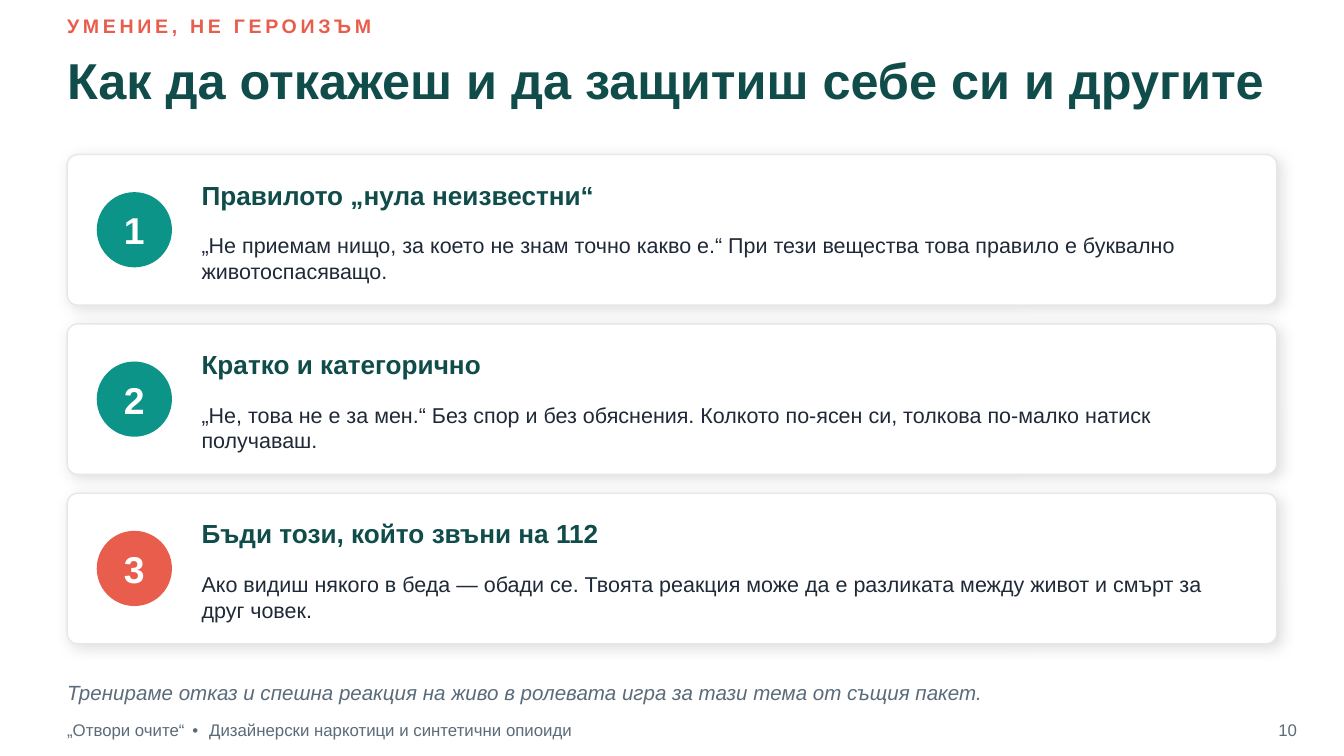
from dataclasses import dataclass

from lxml.etree import SubElement
from pptx import Presentation
from pptx.dml.color import RGBColor as Rgb
from pptx.enum.shapes import MSO_SHAPE as Preset
from pptx.enum.text import MSO_ANCHOR as Anchor, PP_ALIGN as Align
from pptx.oxml.ns import qn
from pptx.shapes.autoshape import Shape
from pptx.slide import Slide
from pptx.util import Pt


@dataclass(frozen=True)
class Theme:
    font: str = "Arial"
    white: str = "FFFFFF"
    dark: str = "0F4C4A"
    teal: str = "0D9488"
    coral: str = "E85D4C"
    body: str = "1F2937"
    muted: str = "5B6B7A"
    border: str = "E5E7EB"
    shadow: str = "000000"
    kicker_size: float = 10.5
    title_size: float = 27
    number_size: float = 20
    heading_size: float = 14
    body_size: float = 11.5
    note_size: float = 11
    footer_size: float = 9


@dataclass(frozen=True)
class Area:
    left: float
    top: float
    width: float
    height: float

    def lengths(self) -> tuple[Pt, Pt, Pt, Pt]:
        return Pt(self.left), Pt(self.top), Pt(self.width), Pt(self.height)


@dataclass(frozen=True)
class Style:
    size: float
    color: str
    bold: bool = False
    italic: bool = False
    spacing: float = 0


@dataclass(frozen=True)
class Span:
    text: str
    style: Style


@dataclass(frozen=True)
class Rule:
    heading: str
    body: str
    color: str


THEME = Theme()
MARGIN = 36
CONTENT_WIDTH = 648
CARD_TOP = 82.8
CARD_HEIGHT = 80.64
CARD_GAP = 10.08
BADGE_SIZE = 40.32
BADGE_LEFT = 51.84
TEXT_LEFT = 108
TEXT_WIDTH = 561.6
FOOTER_TOP = 380.16

KICKER = Style(THEME.kicker_size, THEME.coral, bold=True, spacing=2)
TITLE = Style(THEME.title_size, THEME.dark, bold=True)
NUMBER = Style(THEME.number_size, THEME.white, bold=True)
HEADING = Style(THEME.heading_size, THEME.dark, bold=True)
BODY = Style(THEME.body_size, THEME.body)
NOTE = Style(THEME.note_size, THEME.muted, italic=True)
FOOTER = Style(THEME.footer_size, THEME.muted)
SEPARATOR = Style(THEME.footer_size, THEME.muted, spacing=1.67)

RULES = [
    Rule("Правилото „нула неизвестни“",
         "„Не приемам нищо, за което не знам точно какво е.“ При тези вещества "
         "това правило е буквално животоспасяващо.", THEME.teal),
    Rule("Кратко и категорично",
         "„Не, това не е за мен.“ Без спор и без обяснения. Колкото по-ясен си, "
         "толкова по-малко натиск получаваш.", THEME.teal),
    Rule("Бъди този, който звъни на 112",
         "Ако видиш някого в беда — обади се. Твоята реакция може да е разликата "
         "между живот и смърт за друг човек.", THEME.coral),
]


def write(box: Shape, spans: list[Span], align: Align = Align.LEFT) -> None:
    frame = box.text_frame
    frame.word_wrap = True
    frame.vertical_anchor = Anchor.MIDDLE
    frame.margin_left = frame.margin_top = 0
    frame.margin_right = frame.margin_bottom = 0
    para = frame.paragraphs[0]
    para.alignment = align
    for span in spans:
        run = para.add_run()
        run.text = span.text
        font = run.font
        font.name = THEME.font
        font.size = Pt(span.style.size)
        font.bold = span.style.bold
        font.italic = span.style.italic
        font.color.rgb = Rgb.from_string(span.style.color)
        if span.style.spacing:
            run._r.get_or_add_rPr().set("spc", str(round(span.style.spacing * 100)))


def add_text(page: Slide, area: Area, spans: list[Span],
             align: Align = Align.LEFT) -> None:
    write(page.shapes.add_textbox(*area.lengths()), spans, align)


def add_filled(page: Slide, preset: Preset, area: Area, color: str) -> Shape:
    shape = page.shapes.add_shape(preset, *area.lengths())
    shape.shadow.inherit = False
    shape.fill.solid()
    shape.fill.fore_color.rgb = Rgb.from_string(color)
    shape.line.fill.background()
    return shape


def add_soft_shadow(shape: Shape) -> None:
    effects = shape._element.spPr.find(qn("a:effectLst"))
    shadow = SubElement(effects, qn("a:outerShdw"), blurRad=str(Pt(7)),
                        dist=str(Pt(2)), dir=str(45 * 60000),
                        algn="bl", rotWithShape="0")
    color = SubElement(shadow, qn("a:srgbClr"), val=THEME.shadow)
    SubElement(color, qn("a:alpha"), val="13000")


def add_card(page: Slide, index: int, rule: Rule) -> None:
    top = CARD_TOP + index * (CARD_HEIGHT + CARD_GAP)
    card = add_filled(page, Preset.ROUNDED_RECTANGLE,
                      Area(MARGIN, top, CONTENT_WIDTH, CARD_HEIGHT), THEME.white)
    card.adjustments[0] = 0.07
    card.line.color.rgb = Rgb.from_string(THEME.border)
    card.line.width = Pt(0.75)
    add_soft_shadow(card)

    badge_top = top + (CARD_HEIGHT - BADGE_SIZE) / 2
    badge = add_filled(page, Preset.OVAL,
                       Area(BADGE_LEFT, badge_top, BADGE_SIZE, BADGE_SIZE), rule.color)
    write(badge, [Span(str(index + 1), NUMBER)], Align.CENTER)

    add_text(page, Area(TEXT_LEFT, top + 10.08, TEXT_WIDTH, 23.04),
             [Span(rule.heading, HEADING)])
    add_text(page, Area(TEXT_LEFT, top + 33.84, TEXT_WIDTH, 43.2),
             [Span(rule.body, BODY)])


def main() -> None:
    deck = Presentation()
    deck.slide_width, deck.slide_height = Pt(720), Pt(405)
    page = deck.slides.add_slide(deck.slide_layouts[6])
    page.background.fill.solid()
    page.background.fill.fore_color.rgb = Rgb.from_string(THEME.white)

    add_text(page, Area(MARGIN, 4.32, CONTENT_WIDTH, 18.72),
             [Span("УМЕНИЕ, НЕ ГЕРОИЗЪМ", KICKER)])
    add_text(page, Area(MARGIN, 20.16, CONTENT_WIDTH, 44.64),
             [Span("Как да откажеш и да защитиш себе си и другите", TITLE)])
    for index, rule in enumerate(RULES):
        add_card(page, index, rule)
    add_text(page, Area(MARGIN, 360, CONTENT_WIDTH, 21.6),
             [Span("Тренираме отказ и спешна реакция на живо в ролевата игра "
                   "за тази тема от същия пакет.", NOTE)])
    add_text(page, Area(MARGIN, FOOTER_TOP, 432, 21.6),
             [Span("„Отвори очите“", FOOTER), Span(" • ", SEPARATOR),
              Span("Дизайнерски наркотици и синтетични опиоиди", FOOTER)])
    add_text(page, Area(669.6, FOOTER_TOP, 25.2, 21.6),
             [Span("10", FOOTER)], Align.RIGHT)
    deck.save("out.pptx")


if __name__ == "__main__":
    main()
